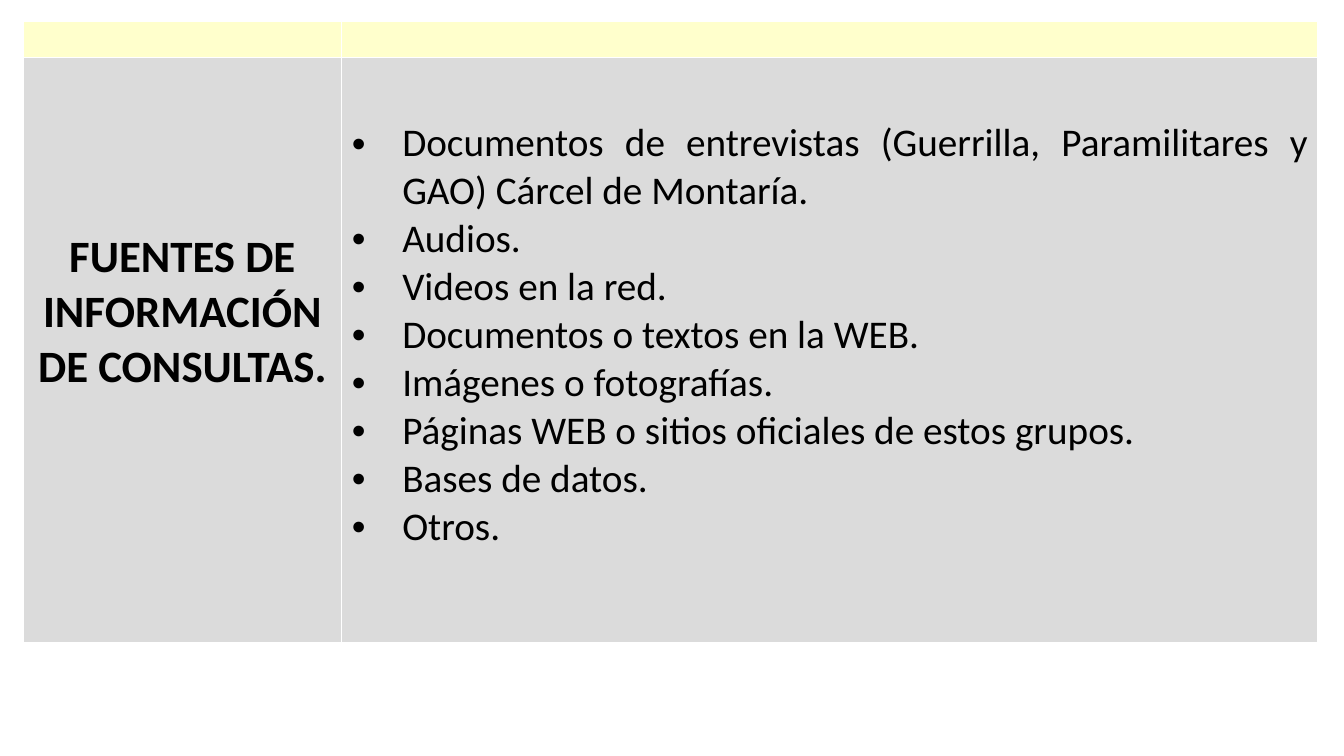
from lxml import etree
from pptx import Presentation
from pptx.dml.color import RGBColor
from pptx.enum.text import MSO_ANCHOR, PP_ALIGN
from pptx.oxml.ns import qn
from pptx.util import Inches, Pt

BLACK = RGBColor(0x00, 0x00, 0x00)
WHITE = RGBColor(0xFF, 0xFF, 0xFF)
CREAM = RGBColor(0xFF, 0xFF, 0xCC)
GREY = RGBColor(0xDB, 0xDB, 0xDB)
MIDDLE = MSO_ANCHOR.MIDDLE
CENTER = PP_ALIGN.CENTER
JUSTIFY = PP_ALIGN.JUSTIFY

HEADING = "FUENTES DE INFORMACIÓN DE CONSULTAS."
SOURCES = [
    "Documentos de entrevistas (Guerrilla, Paramilitares y GAO) Cárcel de Montaría.",
    "Audios.",
    "Videos en la red.",
    "Documentos o textos en la WEB.",
    "Imágenes o fotografías.",
    "Páginas WEB o sitios oficiales de estos grupos.",
    "Bases de datos.",
    "Otros.",
]


class SlideBuilder:
    font_name = "Calibri"
    bullet_indent = Inches(0.5)
    border_width = Pt(1)

    def __init__(self, presentation, layout):
        self.slide = presentation.slides.add_slide(layout)
        self.width = presentation.slide_width
        self.height = presentation.slide_height

    def table(self, left, top, columns, rows):
        column_widths = [round(share * self.width) for share in columns]
        row_heights = [round(share * self.height) for share in rows]
        table = self.slide.shapes.add_table(
            len(rows), len(columns),
            round(left * self.width), round(top * self.height),
            sum(column_widths), sum(row_heights),
        ).table
        table.first_row = False
        table.horz_banding = False
        for column, width in zip(table.columns, column_widths):
            column.width = width
        for row, height in zip(table.rows, row_heights):
            row.height = height
        return table

    def cell(self, cell, fill, side=0.0, top=0.0, bottom=0.0):
        cell.margin_left = cell.margin_right = Inches(side)
        cell.margin_top = Inches(top)
        cell.margin_bottom = Inches(bottom)
        cell.vertical_anchor = MIDDLE
        self.borders(cell)
        cell.fill.solid()
        cell.fill.fore_color.rgb = fill

    def borders(self, cell):
        properties = cell._tc.get_or_add_tcPr()
        for edge in ("a:lnL", "a:lnR", "a:lnT", "a:lnB"):
            line = etree.SubElement(properties, qn(edge), w=str(self.border_width))
            solid = etree.SubElement(line, qn("a:solidFill"))
            etree.SubElement(solid, qn("a:srgbClr"), val=str(WHITE))

    def text(self, cell, lines, size, alignment, bold=False, bulleted=False):
        frame = cell.text_frame
        for index, line in enumerate(lines):
            paragraph = frame.add_paragraph() if index else frame.paragraphs[0]
            paragraph.alignment = alignment
            if bulleted:
                self.bullet(paragraph)
            run = paragraph.add_run()
            run.text = line
            run.font.name = self.font_name
            run.font.size = Pt(size)
            run.font.bold = bold
            run.font.color.rgb = BLACK

    def bullet(self, paragraph):
        properties = paragraph._p.get_or_add_pPr()
        properties.set("marL", str(self.bullet_indent))
        properties.set("indent", str(-self.bullet_indent))
        etree.SubElement(properties, qn("a:buFont"), typeface="Arial")
        etree.SubElement(properties, qn("a:buChar"), char="•")


def main():
    presentation = Presentation()
    presentation.slide_width = Inches(13.33)
    presentation.slide_height = Inches(7.5)
    builder = SlideBuilder(presentation, presentation.slide_layouts[6])

    table = builder.table(
        left=0.23 / 13.33, top=0.21 / 7.5,
        columns=[3.16 / 13.33, 9.68 / 13.33], rows=[0.36 / 7.5, 5.81 / 7.5],
    )
    for column in range(2):
        builder.cell(table.cell(0, column), CREAM)

    heading_cell, sources_cell = table.cell(1, 0), table.cell(1, 1)
    builder.cell(heading_cell, GREY, side=0.07, top=0.05, bottom=0.8)
    builder.text(heading_cell, [HEADING], 32, CENTER, bold=True)
    builder.cell(sources_cell, GREY, side=0.1, top=0.05, bottom=0.35)
    builder.text(sources_cell, SOURCES, 28, JUSTIFY, bulleted=True)

    presentation.save("out.pptx")


if __name__ == "__main__":
    main()
